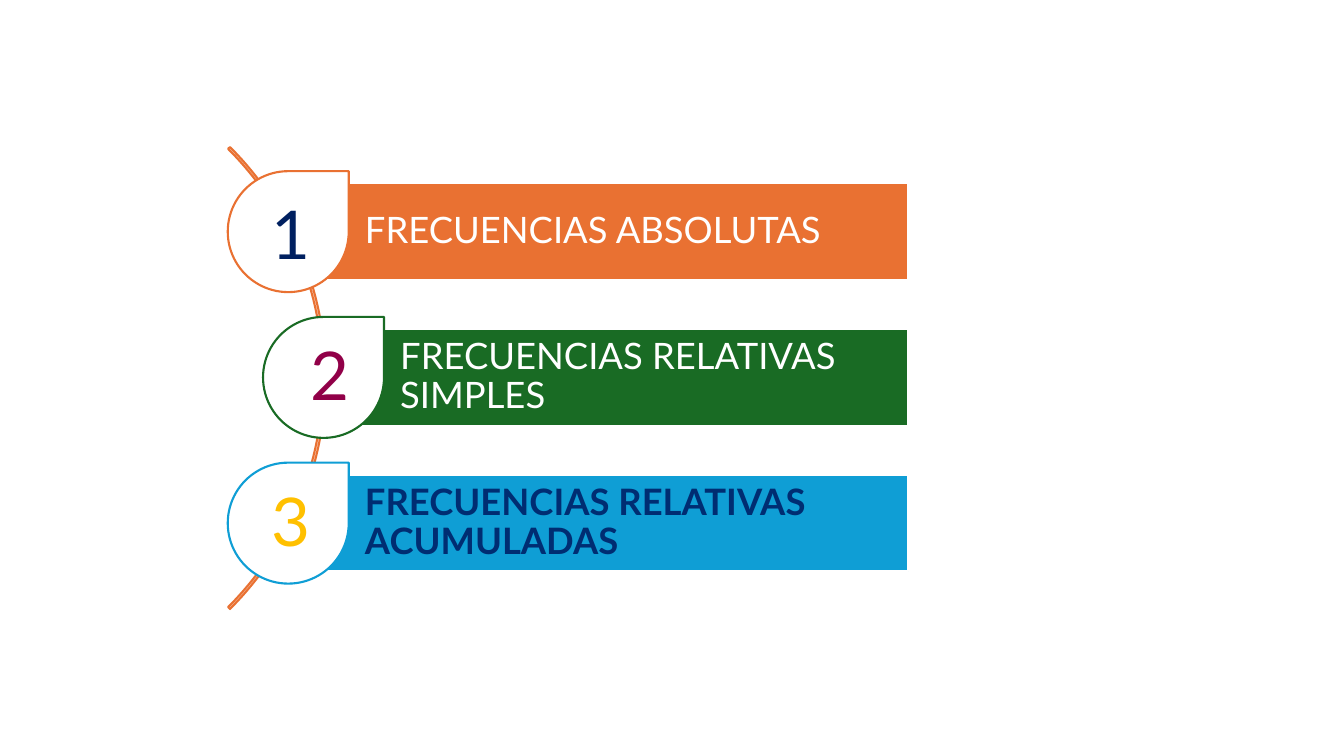
from pptx import Presentation
from pptx.dml.color import RGBColor
from pptx.enum.shapes import MSO_SHAPE
from pptx.enum.text import MSO_ANCHOR, MSO_AUTO_SIZE, PP_ALIGN
from pptx.util import Pt

COLORS = {
    "white": "FFFFFF", "orange": "E97132", "green": "196B24", "blue": "0F9ED5",
    "navy": "002D72", "ink": "002060", "plum": "910048", "gold": "FFC000",
}


class Board:
    """Draws styled elements on one slide, with lengths in points."""

    def __init__(self, slide, font="Lato"):
        self.slide = slide
        self.font = font

    def color(self, name):
        return RGBColor.from_string(COLORS[name])

    def shape(self, kind, box, fill, line):
        shape = self.slide.shapes.add_shape(kind, *map(Pt, box))
        shape.shadow.inherit = False
        if fill:
            shape.fill.solid()
            shape.fill.fore_color.rgb = self.color(fill)
        else:
            shape.fill.background()
        shape.line.color.rgb = self.color(line)
        shape.line.width = Pt(1.5)
        return shape

    def label(self, frame, text, size, color, align, bold=False):
        frame.word_wrap = True
        para = frame.paragraphs[0]
        para.text = text
        para.alignment = align
        para.font.name = self.font
        para.font.size = Pt(size)
        para.font.bold = bold
        para.font.color.rgb = self.color(color)
        return para

    def arc(self, box, line):
        arc = self.shape(MSO_SHAPE.BLOCK_ARC, box, None, line)
        for index, value in enumerate((189, 27, 0.004)):
            arc.adjustments[index] = value

    def bar(self, box, fill, text, color, bold):
        frame = self.shape(MSO_SHAPE.RECTANGLE, box, fill, "white").text_frame
        frame.margin_left = Pt(54.8)
        frame.margin_right = frame.margin_top = frame.margin_bottom = Pt(5.2)
        frame.vertical_anchor = MSO_ANCHOR.MIDDLE
        para = self.label(frame, text, 26, color, PP_ALIGN.LEFT, bold)
        para.line_spacing = 0.9

    def drop(self, box, line):
        self.shape(MSO_SHAPE.TEAR, box, "white", line)

    def digit(self, box, text, color):
        frame = self.slide.shapes.add_textbox(*map(Pt, box)).text_frame
        self.label(frame, text, 48, color, PP_ALIGN.CENTER)
        frame.auto_size = MSO_AUTO_SIZE.SHAPE_TO_FIT_TEXT


def main():
    deck = Presentation()
    deck.slide_width, deck.slide_height = Pt(960), Pt(540)
    board = Board(deck.slides.add_slide(deck.slide_layouts[6]))
    board.arc((-234, 36.7, 466.6, 466.6), "orange")

    right, top, pitch, height, side = 648.7, 131, 104.1, 69, 86.4
    steps = [
        (205.9, "orange", "FRECUENCIAS ABSOLUTAS", "white", False),
        (231.1, "green", "FRECUENCIAS RELATIVAS SIMPLES", "white", False),
        (205.9, "blue", "FRECUENCIAS RELATIVAS ACUMULADAS", "navy", True),
    ]
    for row, (left, fill, text, color, bold) in enumerate(steps):
        y = top + row * pitch
        board.bar((left, y, right - left, height), fill, text, color, bold)
        board.drop((left - side / 2, y + (height - side) / 2, side, side), fill)

    digits = [(182.2, 133.9, "ink"), (209.5, 234.7, "plum"), (182.2, 339.1, "gold")]
    for number, (x, y, color) in enumerate(digits, 1):
        board.digit((x, y, 51.8, 65.5), str(number), color)
    deck.save("out.pptx")


if __name__ == "__main__":
    main()
